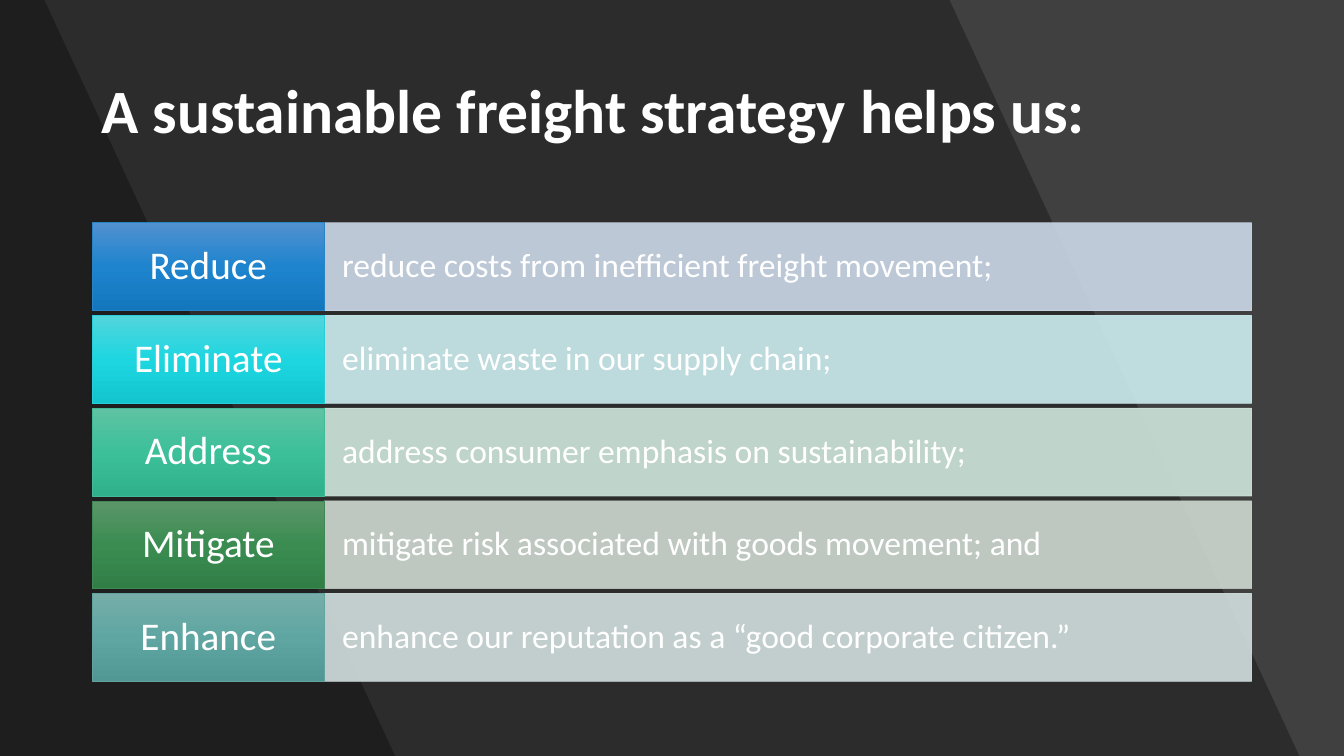
from copy import deepcopy

from lxml.etree import SubElement
from pptx import Presentation
from pptx.dml.color import RGBColor
from pptx.enum.shapes import MSO_SHAPE
from pptx.enum.text import MSO_ANCHOR, PP_ALIGN
from pptx.oxml.ns import qn
from pptx.util import Pt

WIDTH, HEIGHT = 960, 540
LEFT, TOP = 66, 159.2
VERB_WIDTH, GOAL_WIDTH = 165.6, 662.4
ROW_HEIGHT, ROW_PITCH = 62.7, 66.2

GOALS = [
    ("Reduce", "reduce costs from inefficient freight movement;",
     ("5191D0", "1E84CE", "1477BE"), "2683C6", "CDD9EA"),
    ("Eliminate", "eliminate waste in our supply chain;",
     ("52D5DD", "1ED6E0", "13C5CF"), "27CED7", "CDEDF0"),
    ("Address", "address consumer emphasis on sustainability;",
     ("5FC3A3", "3CC09A", "30B08B"), "42BA97", "CFE7DD"),
    ("Mitigate", "mitigate risk associated with goods movement; and",
     ("5C966A", "3A8C51", "317F47"), "3E8853", "CEDAD1"),
    ("Enhance", "enhance our reputation as a “good corporate citizen.”",
     ("76ADA9", "5FA6A2", "519793"), "62A39F", "D3E0DF"),
]


def color(hex_code):
    return RGBColor.from_string(hex_code)


class FreightSlide:
    font = "Calibri"
    text_color = "FFFFFF"

    def __init__(self, slide):
        self.slide = slide

    def backdrop(self, hex_code):
        fill = self.slide.background.fill
        fill.solid()
        fill.fore_color.rgb = color(hex_code)

    def opacity(self, shape, percent):
        for tint in shape._element.spPr.iter(qn("a:srgbClr")):
            SubElement(tint, qn("a:alpha"), val=str(percent * 1000))

    def shade(self, top_right, bottom_right):
        outline = self.slide.shapes.build_freeform(0, 0)
        corners = [(top_right, 0), (bottom_right, HEIGHT), (0, HEIGHT)]
        outline.add_line_segments([(Pt(x), Pt(y)) for x, y in corners])
        panel = outline.convert_to_shape()
        panel.shadow.inherit = False
        panel.fill.solid()
        panel.fill.fore_color.rgb = color("000000")
        panel.line.fill.background()
        self.opacity(panel, 30)

    def set_text(self, shape, text, size, align=PP_ALIGN.LEFT, bold=False, insets=(7.2, 3.6)):
        frame = shape.text_frame
        frame.word_wrap = True
        frame.vertical_anchor = MSO_ANCHOR.MIDDLE
        frame.margin_left = frame.margin_right = Pt(insets[0])
        frame.margin_top = frame.margin_bottom = Pt(insets[1])
        paragraph = frame.paragraphs[0]
        paragraph.text = text
        paragraph.alignment = align
        paragraph.line_spacing = 0.9
        paragraph.font.name = self.font
        paragraph.font.size = Pt(size)
        paragraph.font.bold = bold
        paragraph.font.color.rgb = color(self.text_color)

    def title(self, text, left, top, width, height):
        heading = self.slide.shapes.add_textbox(Pt(left), Pt(top), Pt(width), Pt(height))
        self.set_text(heading, text, 44, bold=True)

    def block(self, left, top, width, line_color):
        block = self.slide.shapes.add_shape(
            MSO_SHAPE.RECTANGLE, Pt(left), Pt(top), Pt(width), Pt(ROW_HEIGHT))
        block.shadow.inherit = False
        block.line.width = Pt(0.5)
        block.line.color.rgb = color(line_color)
        return block

    def goal(self, text, top, tint):
        band = self.block(LEFT + VERB_WIDTH, top, GOAL_WIDTH, tint)
        band.fill.solid()
        band.fill.fore_color.rgb = color(tint)
        self.opacity(band, 90)
        self.set_text(band, text, 24, insets=(12.8, 15.8))

    def verb(self, text, top, shades, line_color):
        label = self.block(LEFT, top, VERB_WIDTH, line_color)
        label.fill.gradient()
        label.fill.gradient_angle = 270
        stops = label._element.spPr.find(qn("a:gradFill")).find(qn("a:gsLst"))
        stops.append(deepcopy(stops[0]))
        for stop, shade, position in zip(label.fill.gradient_stops, shades, (0, 0.5, 1)):
            stop.color.rgb = color(shade)
            stop.position = position
        self.set_text(label, text, 28, PP_ALIGN.CENTER, insets=(8.6, 6.5))


def main():
    presentation = Presentation()
    presentation.slide_width, presentation.slide_height = Pt(WIDTH), Pt(HEIGHT)
    page = FreightSlide(presentation.slides.add_slide(presentation.slide_layouts[6]))
    page.backdrop("404040")
    page.shade(678.2, 928.1)
    page.shade(31.7, 282.2)
    page.title("A sustainable freight strategy helps us:", 65.5, 28.8, 828.7, 104.4)
    for row, (verb, goal, shades, line_color, tint) in enumerate(GOALS):
        top = TOP + row * ROW_PITCH
        page.goal(goal, top, tint)
        page.verb(verb, top, shades, line_color)
    presentation.save("out.pptx")


if __name__ == "__main__":
    main()
